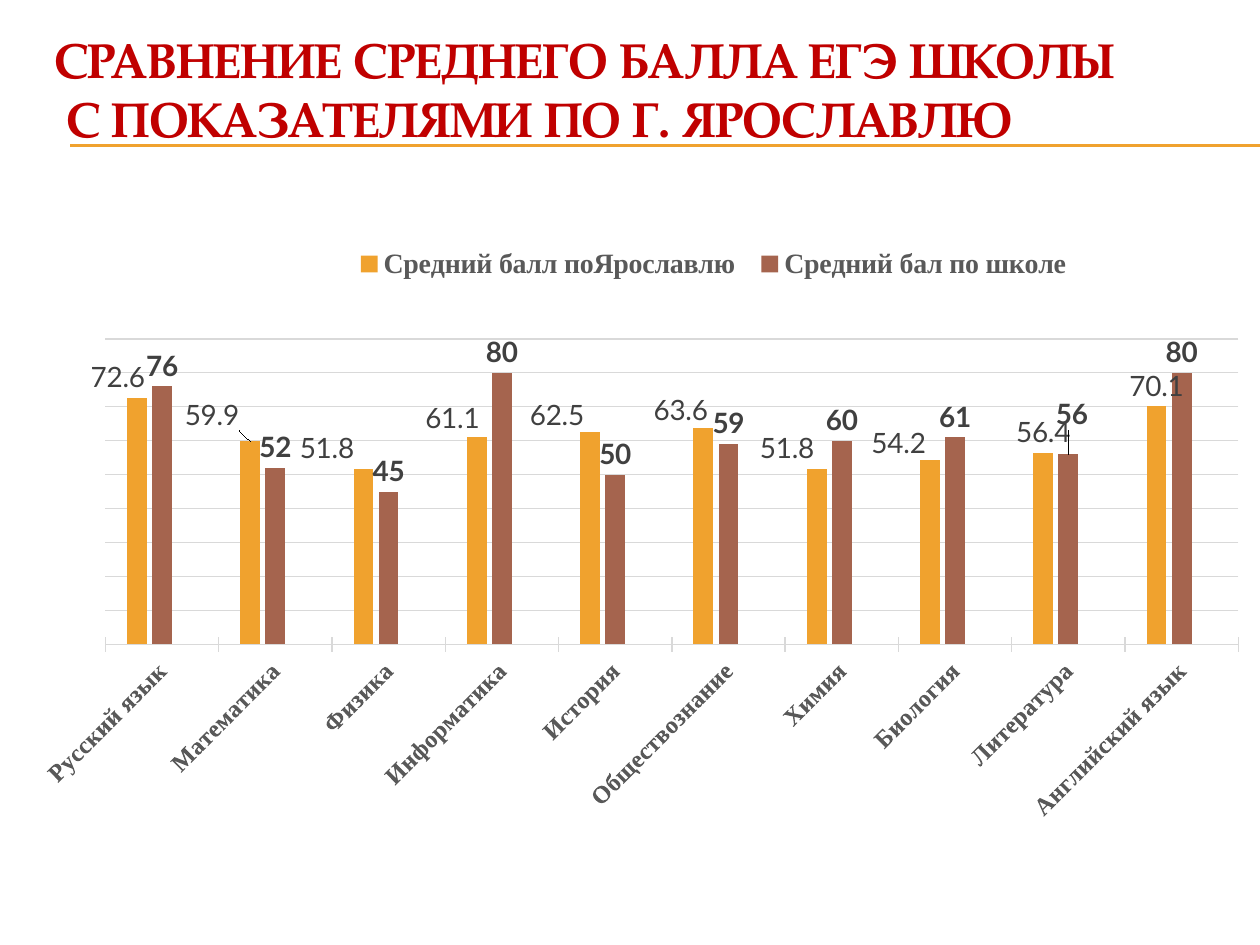
from lxml import etree
from pptx import Presentation
from pptx.chart.data import CategoryChartData
from pptx.dml.color import RGBColor
from pptx.enum.chart import XL_CHART_TYPE, XL_LABEL_POSITION, XL_LEGEND_POSITION, XL_TICK_MARK
from pptx.enum.shapes import MSO_CONNECTOR
from pptx.enum.text import MSO_ANCHOR
from pptx.oxml.ns import qn
from pptx.util import Pt

COLUMNS = XL_CHART_TYPE.COLUMN_CLUSTERED
OUTSIDE_END = XL_LABEL_POSITION.OUTSIDE_END
BOTTOM_LEGEND = XL_LEGEND_POSITION.BOTTOM
CROSS, NO_TICK = XL_TICK_MARK.CROSS, XL_TICK_MARK.NONE
STRAIGHT = MSO_CONNECTOR.STRAIGHT
BOTTOM = MSO_ANCHOR.BOTTOM

color = RGBColor.from_string
AMBER, BROWN, TAN = "F0A22E", "A5644E", "B58B80"
RED, GRAY, DARK, GRID = "C00000", "595959", "404040", "D9D9D9"
SERIF, SANS = "Times New Roman", "Lato"


def style_font(font, size, hex_color, name, bold=False):
    font.size = Pt(size)
    font.color.rgb = color(hex_color)
    font.name = name
    font.bold = bold


def set_layout(parent, index, **settings):
    """Give a chart part a manual layout, placed at index among its children."""
    for old in parent.findall(qn("c:layout")):
        parent.remove(old)
    layout = etree.Element(qn("c:layout"))
    manual = etree.SubElement(layout, qn("c:manualLayout"))
    for tag, value in settings.items():
        etree.SubElement(manual, qn(f"c:{tag}")).set("val", str(value))
    parent.insert(index, layout)


prs = Presentation()
prs.slide_width, prs.slide_height = Pt(720), Pt(540)
slide = prs.slides.add_slide(prs.slide_layouts[6])

# Rules under the title
for y in (82.8, 83.5):
    rule = slide.shapes.add_connector(STRAIGHT, Pt(40.3), Pt(y), Pt(720), Pt(y))
    rule.line.color.rgb = color(AMBER)
    rule.line.width = Pt(0.75)
    etree.SubElement(rule._element.spPr, qn("a:effectLst"))

# Title
title = slide.shapes.add_textbox(Pt(24), Pt(36), Pt(684), Pt(66)).text_frame
title.word_wrap = True
title.vertical_anchor = BOTTOM
title.margin_bottom = Pt(18)
heading = title.paragraphs[0]
heading.text = "СРАВНЕНИЕ СРЕДНЕГО БАЛЛА ЕГЭ ШКОЛЫ \v С ПОКАЗАТЕЛЯМИ ПО Г. ЯРОСЛАВЛЮ"
for run in heading.runs:
    style_font(run.font, 27.9, RED, "TeX Gyre Pagella", bold=True)

# Chart data; the empty third series keeps its share of each category's width
subjects = ["Русский язык", "Математика", "Физика", "Информатика", "История",
            "Обществознание", "Химия", "Биология", "Литература", "Английский язык"]
city_scores = [72.6, 59.9, 51.8, 61.1, 62.5, 63.6, 51.8, 54.2, 56.4, 70.1]
school_scores = [76, 52, 45, 80, 50, 59, 60, 61, 56, 80]
scores = CategoryChartData()
scores.categories = subjects
scores.add_series("Средний балл поЯрославлю", city_scores)
scores.add_series("Средний бал по школе", school_scores)
scores.add_series("Series 3", [None] * len(subjects))

CHART_WIDTH, CHART_HEIGHT = 684, 356.4
chart = slide.shapes.add_chart(COLUMNS, Pt(24), Pt(122.4), Pt(CHART_WIDTH),
                               Pt(CHART_HEIGHT), scores).chart
style_font(chart.font, 10, "000000", SANS)
chart.has_title = False
set_layout(chart._chartSpace.chart.plotArea, 0, layoutTarget="inner",
           xMode="edge", yMode="edge", x=0.05, y=0.2, w=0.95, h=0.49)

# Axes
subject_axis = chart.category_axis
subject_axis.major_tick_mark = CROSS
subject_axis.format.line.color.rgb = color(GRID)
subject_axis.format.line.width = Pt(0.75)
style_font(subject_axis.tick_labels.font, 14, GRAY, SERIF, bold=True)
subject_axis._element.find(qn("c:txPr")).find(qn("a:bodyPr")).set("rot", str(-45 * 60000))

score_axis = chart.value_axis
score_axis.minimum_scale, score_axis.maximum_scale, score_axis.major_unit = 0, 90, 10
score_axis.major_tick_mark = NO_TICK
score_axis.has_major_gridlines = True
score_axis.major_gridlines.format.line.color.rgb = color(GRID)
score_axis.major_gridlines.format.line.width = Pt(0.75)
score_axis.visible = False

# Legend, without the empty series
chart.has_legend = True
legend = chart.legend
legend.position = BOTTOM_LEGEND
legend.include_in_layout = False
style_font(legend.font, 16, GRAY, SERIF, bold=True)
set_layout(legend._element, 1, xMode="edge", yMode="edge", x=0.25, y=0.04, w=0.62, h=0.08)
hidden_entry = etree.Element(qn("c:legendEntry"))
etree.SubElement(hidden_entry, qn("c:idx")).set("val", "2")
etree.SubElement(hidden_entry, qn("c:delete")).set("val", "1")
legend._element.insert(1, hidden_entry)

# Columns and labels; label shifts are in points by category index
plot = chart.plots[0]
plot.vary_by_categories = False
plot.gap_width, plot.overlap = 219, -27
city_shifts = {0: (-11, 0), 1: (-22, -3), 2: (-21, 0), 3: (-14, 1),
               4: (-19, 2), 5: (-13, 1), 6: (-17, 0), 7: (-18, 2)}
series_styles = [
    (AMBER, 16, False, city_shifts),
    (BROWN, 16, True, {8: (2, -11)}),
    (TAN, 12, False, {}),
]
for series, (fill, size, bold, shifts) in zip(plot.series, series_styles):
    series.format.fill.solid()
    series.format.fill.fore_color.rgb = color(fill)
    series.invert_if_negative = False
    labels = series.data_labels
    labels.show_value = True
    labels.position = OUTSIDE_END
    style_font(labels.font, size, DARK, SANS, bold)
    for index, (dx, dy) in shifts.items():
        label = series.points[index].data_label
        style_font(label.font, size, DARK, SANS, bold)
        label.position = OUTSIDE_END
        label_xml = labels._element.find(f"{qn('c:dLbl')}[{len(labels._element.findall(qn('c:dLbl')))}]")
        set_layout(label_xml, 1, x=dx / CHART_WIDTH, y=dy / CHART_HEIGHT)

prs.save("out.pptx")
